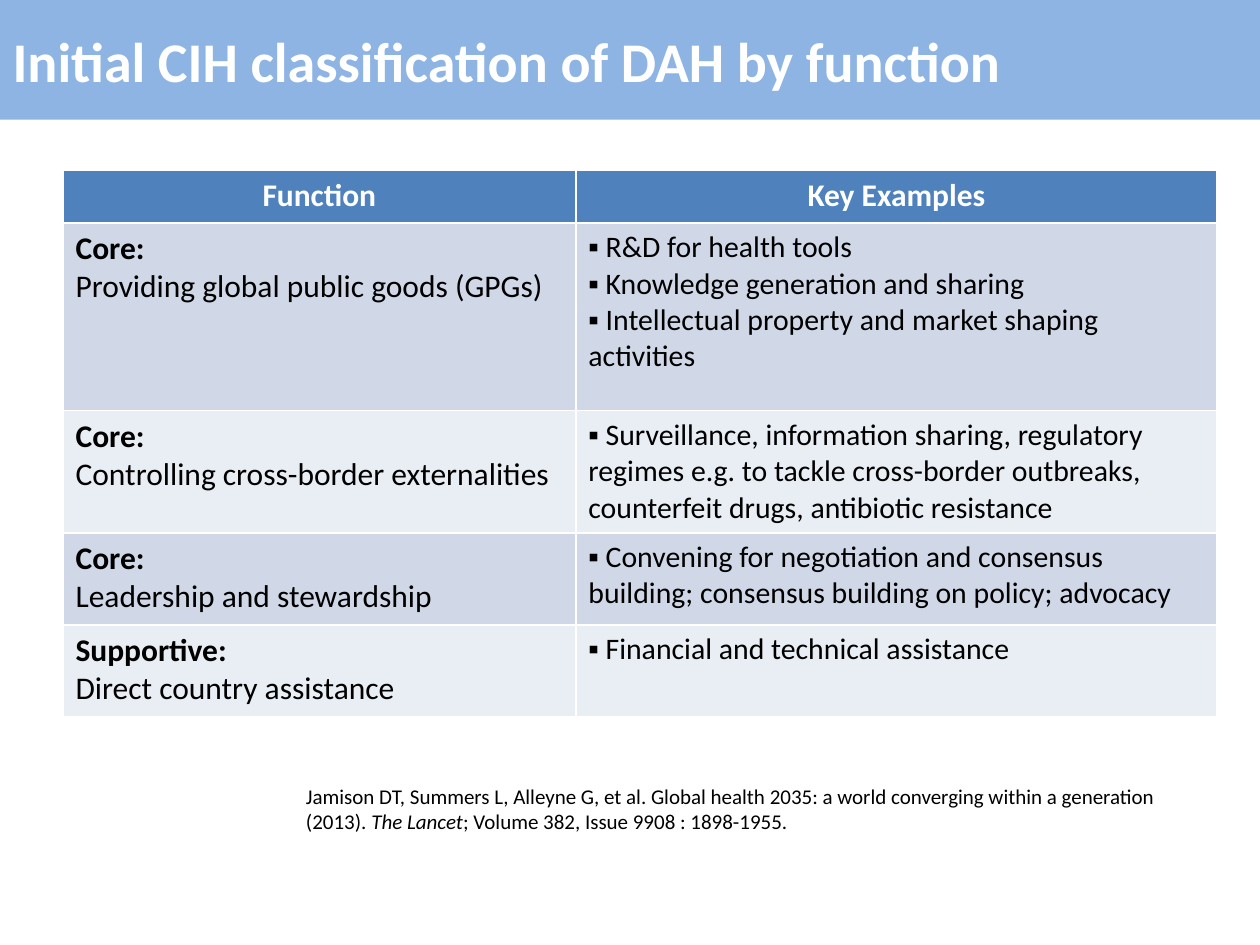
from pptx import Presentation
from pptx.dml.color import RGBColor as Color
from pptx.enum.text import MSO_ANCHOR as Anchor, PP_ALIGN as Align
from pptx.util import Inches, Pt

COLORS = {"banner": "8EB4E3", "header": "4F81BD", "odd": "D0D8E8",
          "even": "E9EDF4", "light": "FFFFFF", "dark": "000000"}
HEADINGS = ["Function", "Key Examples"]
FUNCTIONS = [
    ("Core:", "Providing global public goods (GPGs)",
     ["R&D for health tools", "Knowledge generation and sharing",
      "Intellectual property and market shaping activities"]),
    ("Core:", "Controlling cross-border externalities",
     ["Surveillance, information sharing, regulatory regimes e.g. to tackle "
      "cross-border outbreaks, counterfeit drugs, antibiotic resistance"]),
    ("Core:", "Leadership and stewardship",
     ["Convening for negotiation and consensus building; "
      "consensus building on policy; advocacy"]),
    ("Supportive:", "Direct country assistance",
     ["Financial and technical assistance"]),
]
COLUMN_WIDTHS = [4.07, 5.09]
ROW_HEIGHTS = [0.42, 1.49, 0.97, 0.73, 0.73]


def add_run(paragraph, text, color="dark", **formats):
    run = paragraph.add_run()
    run.text = text
    run.font.color.rgb = Color.from_string(COLORS[color])
    for name, value in {"name": "Calibri", **formats}.items():
        setattr(run.font, name, value)


def fill_cell(cell, fill, lines, align=Align.LEFT):
    cell.fill.solid()
    cell.fill.fore_color.rgb = Color.from_string(COLORS[fill])
    frame = cell.text_frame
    for index, (text, formats) in enumerate(lines):
        paragraph = frame.add_paragraph() if index else frame.paragraphs[0]
        paragraph.alignment = align
        add_run(paragraph, text, **formats)


presentation = Presentation()
presentation.slide_width, presentation.slide_height = Inches(10), Inches(7.5)
slide = presentation.slides.add_slide(presentation.slide_layouts[5])

# Title banner
title = slide.shapes.title
banner = {"left": 0, "top": 0, "width": presentation.slide_width,
          "height": Inches(0.95)}
for name, value in banner.items():
    setattr(title, name, value)
title.fill.solid()
title.fill.fore_color.rgb = Color.from_string(COLORS["banner"])
title.text_frame.vertical_anchor = Anchor.MIDDLE
heading = title.text_frame.paragraphs[0]
heading.alignment = Align.LEFT
add_run(heading, "Initial CIH classification of DAH by function", "light",
        size=Pt(32), bold=True)

# Table grid
table = slide.shapes.add_table(
    len(ROW_HEIGHTS), len(COLUMN_WIDTHS), Inches(0.5), Inches(1.35),
    Inches(sum(COLUMN_WIDTHS)), Inches(sum(ROW_HEIGHTS))).table
for column, width in zip(table.columns, COLUMN_WIDTHS):
    column.width = Inches(width)
for row, height in zip(table.rows, ROW_HEIGHTS):
    row.height = Inches(height)

# Table contents
for column, text in enumerate(HEADINGS):
    formats = {"color": "light", "size": Pt(18), "bold": True}
    fill_cell(table.cell(0, column), "header", [(text, formats)], Align.CENTER)
for row, (kind, function, examples) in enumerate(FUNCTIONS, start=1):
    fill = "odd" if row % 2 else "even"
    fill_cell(table.cell(row, 0), fill,
              [(kind, {"size": Pt(18), "bold": True}),
               (function, {"size": Pt(18), "bold": False})])
    fill_cell(table.cell(row, 1), fill,
              [(f"▪ {example}", {"size": Pt(17), "bold": False})
               for example in examples])

# Citation
citation = slide.shapes.add_textbox(
    Inches(2.33), Inches(6.17), Inches(7.33), Inches(0.5))
citation.text_frame.word_wrap = True
for text, italic in [
        ("Jamison DT, Summers L, Alleyne G, et al. Global health 2035: "
         "a world converging within a generation (2013). ", False),
        ("The Lancet", True),
        ("; Volume 382, Issue 9908 : 1898-1955.", False)]:
    add_run(citation.text_frame.paragraphs[0], text, size=Pt(12), italic=italic)

presentation.save("out.pptx")
